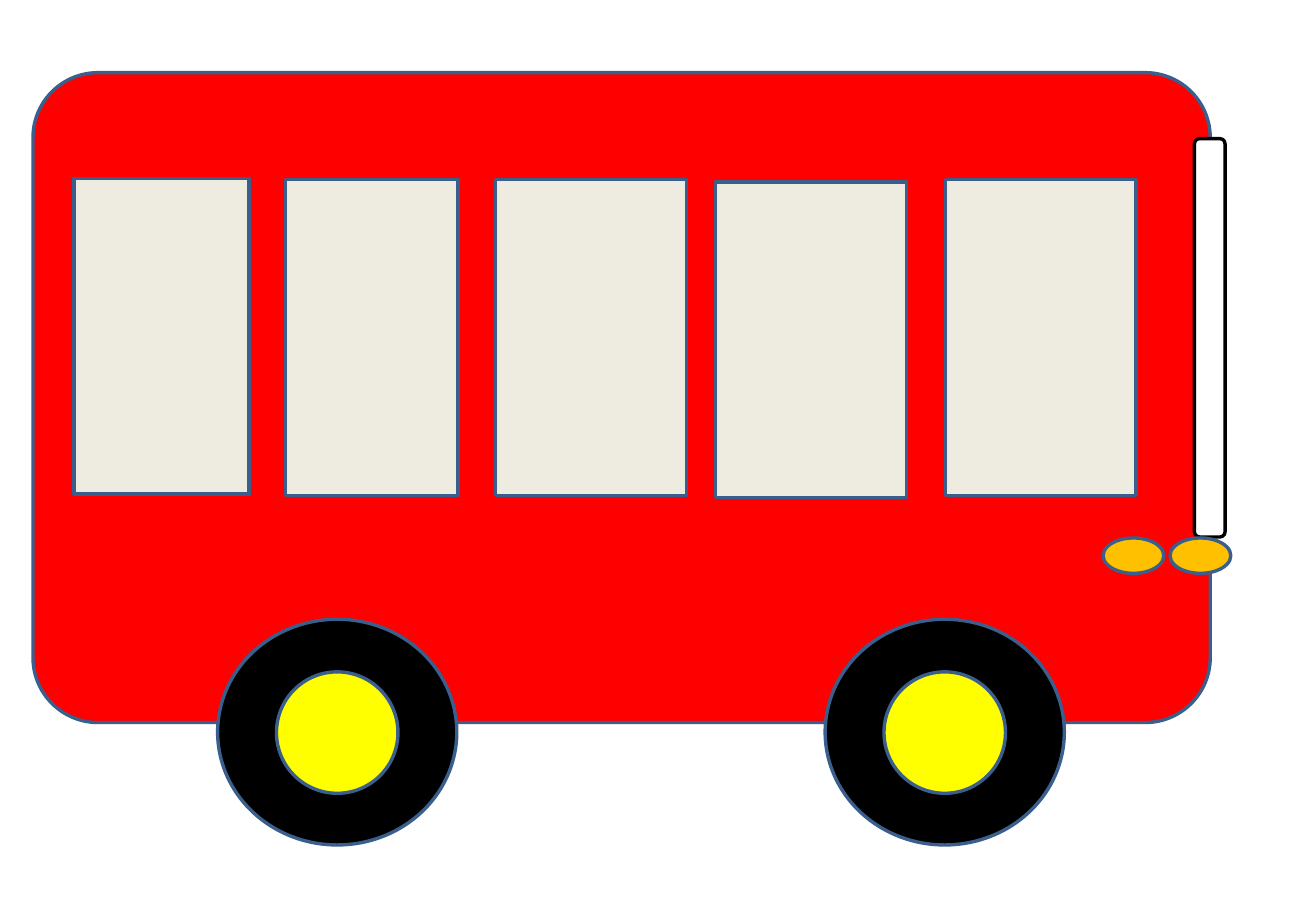
from dataclasses import dataclass

from pptx import Presentation, util as u
from pptx.dml.color import RGBColor
from pptx.enum import shapes

RED = RGBColor(0xFF, 0x00, 0x00)
CREAM = RGBColor(0xEE, 0xEC, 0xE1)
WHITE = RGBColor(0xFF, 0xFF, 0xFF)
AMBER = RGBColor(0xFF, 0xC0, 0x00)
BLACK = RGBColor(0x00, 0x00, 0x00)
YELLOW = RGBColor(0xFF, 0xFF, 0x00)
STEEL_BLUE = RGBColor(0x3A, 0x5F, 0x8C)

RECT = shapes.MSO_SHAPE.RECTANGLE
ROUNDED = shapes.MSO_SHAPE.ROUNDED_RECTANGLE
OVAL = shapes.MSO_SHAPE.OVAL


@dataclass(frozen=True)
class Part:
    """A piece of the bus, measured in centimetres."""
    kind: shapes.MSO_SHAPE
    left: float
    top: float
    width: float
    height: float
    fill: RGBColor
    line: RGBColor = STEEL_BLUE
    corner: float | None = None


def window(left: float, top: float, width: float) -> Part:
    return Part(RECT, left, top, width, 6.6, CREAM)


def headlight(left: float) -> Part:
    return Part(OVAL, left, 11.25, 1.27, 0.74, AMBER)


def wheel(left: float) -> list[Part]:
    """Return the tyre and the hub on top of it."""
    return [
        Part(OVAL, left, 12.95, 5, 4.72, BLACK),
        Part(OVAL, left + 1.23, 14.05, 2.54, 2.54, YELLOW),
    ]


def draw(slide, part: Part) -> None:
    box = (u.Cm(n) for n in (part.left, part.top, part.width, part.height))
    sp = slide.shapes.add_shape(part.kind, *box)
    sp.shadow.inherit = False
    sp.fill.solid()
    sp.fill.fore_color.rgb = part.fill
    sp.line.color.rgb = part.line
    sp.line.width = u.Pt(2)
    if part.corner is not None:
        sp.adjustments[0] = part.corner


BUS = [
    Part(ROUNDED, 0.69, 1.52, 24.61, 13.59, RED, corner=0.1),
    window(1.55, 3.73, 3.66),
    window(5.97, 3.76, 3.61),
    window(10.36, 3.76, 3.99),
    window(14.96, 3.81, 3.99),
    window(19.76, 3.76, 3.99),
    Part(ROUNDED, 24.97, 2.9, 0.64, 8.33, WHITE, BLACK),
    headlight(24.46),
    headlight(23.06),
    *wheel(17.25),
    *wheel(4.55),
]


def main() -> None:
    prs = Presentation()
    prs.slide_width, prs.slide_height = u.Cm(27.51), u.Cm(19.05)
    s = prs.slides.add_slide(prs.slide_layouts[6])
    for part in BUS:
        draw(s, part)
    prs.save("out.pptx")


if __name__ == "__main__":
    main()
